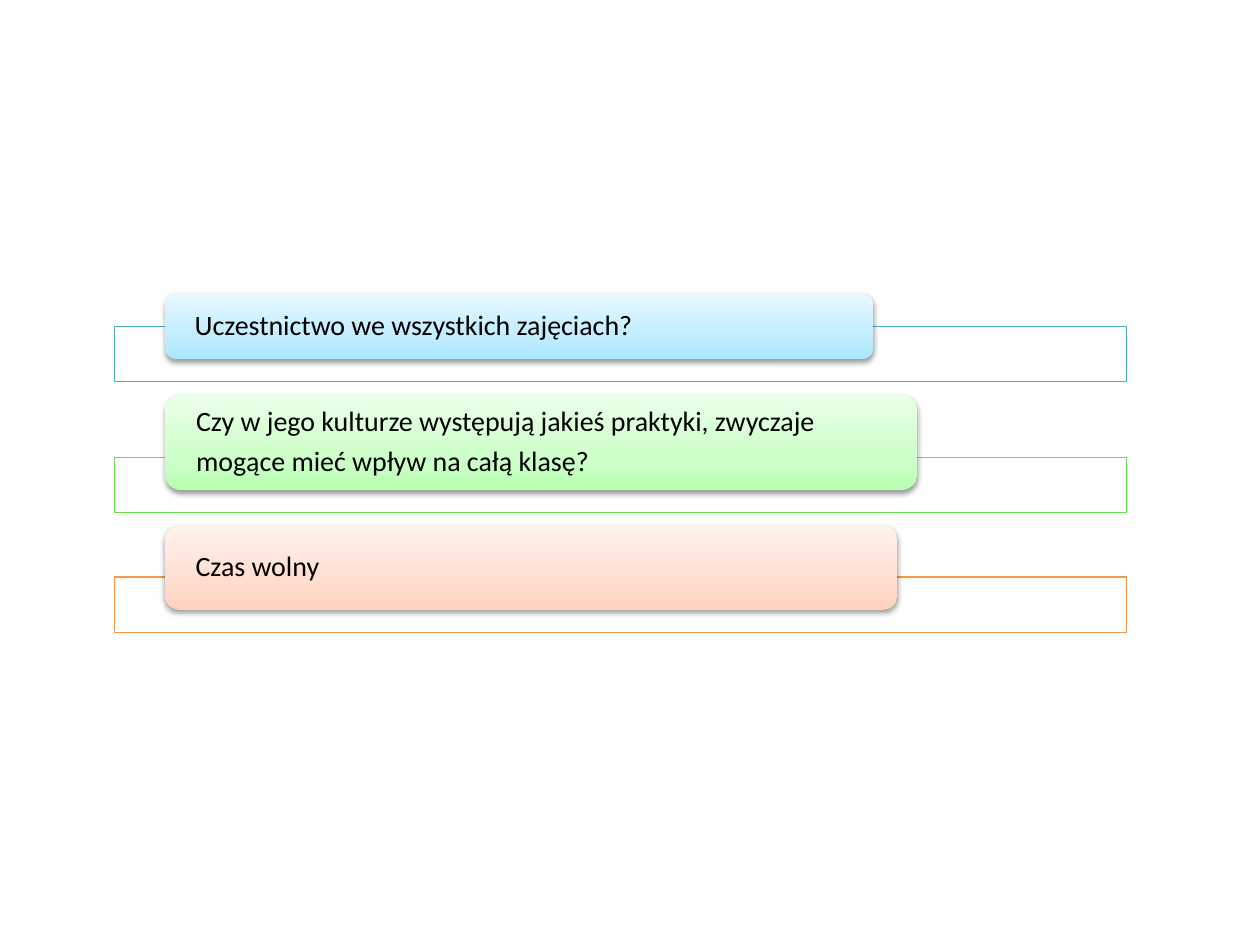
from dataclasses import dataclass
from copy import deepcopy

from lxml import etree
from pptx import Presentation
from pptx import util as u
from pptx.dml.color import RGBColor
from pptx.enum import shapes, text
from pptx.oxml import ns, parse_xml


@dataclass(frozen=True)
class Theme:
    font: str = "Calibri"
    size: int = 16
    ink: str = "000000"
    paper: str = "FFFFFF"
    blue: tuple = ("4BACC6", ("A7E6FF", "C1EDFF", "E7F8FF"))
    green: tuple = ("60E146", ("B9FFB2", "CDFFC9", "ECFFEA"))
    orange: tuple = ("F79646", ("FFD2BD", "FFDED0", "FFF2ED"))


class QuestionList:
    """Draws outlined frames with overlapping, gradient-filled labels."""

    def __init__(self, slide, theme):
        self.theme = theme
        self.group = slide.shapes.add_group_shape()

    def add_box(self, kind, left, top, width, height):
        shape = self.group.shapes.add_shape(
            kind, u.Inches(left), u.Inches(top), u.Inches(width), u.Inches(height))
        shape.shadow.inherit = False
        return shape

    def add_frame(self, top, height, color):
        frame = self.add_box(shapes.MSO_SHAPE.RECTANGLE, 0.91, top, 8.03, height)
        frame.fill.solid()
        frame.fill.fore_color.rgb = RGBColor.from_string(self.theme.paper)
        solid = frame.fill._xPr.find(ns.qn("a:solidFill"))
        etree.SubElement(solid[0], ns.qn("a:alpha"), val="90000")
        frame.line.color.rgb = RGBColor.from_string(color)
        frame.line.width = u.Pt(0.75)

    def add_label(self, top, width, height, colors, lines):
        label = self.add_box(
            shapes.MSO_SHAPE.ROUNDED_RECTANGLE, 1.31, top, width, height)
        label.line.fill.background()
        self.set_gradient(label, colors)
        self.set_shadow(label)
        self.set_text(label.text_frame, lines)

    def set_gradient(self, shape, colors):
        shape.fill.gradient()
        shape.fill.gradient_angle = 90
        stop_list = shape._element.spPr.find(ns.qn("a:gradFill")).find(ns.qn("a:gsLst"))
        stop_list.insert(1, deepcopy(stop_list[0]))
        for stop, position, color in zip(
                shape.fill.gradient_stops, (0, 0.35, 1), colors):
            stop.position = position
            stop.color.rgb = RGBColor.from_string(color)

    def set_shadow(self, shape):
        effects = shape._element.spPr.find(ns.qn("a:effectLst"))
        effects.append(parse_xml(
            f'<a:outerShdw {ns.nsdecls("a")} blurRad="{u.Pt(3.1)}" '
            f'dist="{u.Pt(1.6)}" dir="5400000" rotWithShape="0">'
            f'<a:srgbClr val="{self.theme.ink}"><a:alpha val="38000"/></a:srgbClr>'
            '</a:outerShdw>'))

    def set_text(self, frame, lines):
        frame.word_wrap = True
        frame.vertical_anchor = text.MSO_ANCHOR.MIDDLE
        frame.margin_left = frame.margin_right = u.Inches(0.21)
        frame.margin_top = frame.margin_bottom = 0
        frame.text = "\n".join(lines)
        for paragraph in frame.paragraphs:
            paragraph.alignment = text.PP_ALIGN.LEFT
            paragraph.line_spacing = 0.9
            paragraph.space_after = u.Pt(self.theme.size * 0.35)
            paragraph.font.name = self.theme.font
            paragraph.font.size = u.Pt(self.theme.size)
            paragraph.font.color.rgb = RGBColor.from_string(self.theme.ink)


def main():
    presentation = Presentation()
    presentation.slide_width = u.Inches(10)
    presentation.slide_height = u.Inches(7.5)
    slide = presentation.slides.add_slide(presentation.slide_layouts[6])
    theme = Theme()
    questions = QuestionList(slide, theme)
    rows = (
        (5.62, 0.52, theme.blue, ["Uczestnictwo we wszystkich zajęciach?"]),
        (5.97, 0.76, theme.green, [
            "Czy w jego kulturze występują jakieś praktyki, zwyczaje",
            "mogące mieć wpływ na całą klasę?"]),
        (5.81, 0.67, theme.orange, ["Czas wolny"]),
    )
    top, frame_height, overlap, gap = 2.33, 0.44, 0.26, 0.1
    for width, height, (outline, gradient), lines in rows:
        frame_top = top + height - overlap
        questions.add_frame(frame_top, frame_height, outline)
        questions.add_label(top, width, height, gradient, lines)
        top = frame_top + frame_height + gap
    presentation.save("out.pptx")


if __name__ == "__main__":
    main()
